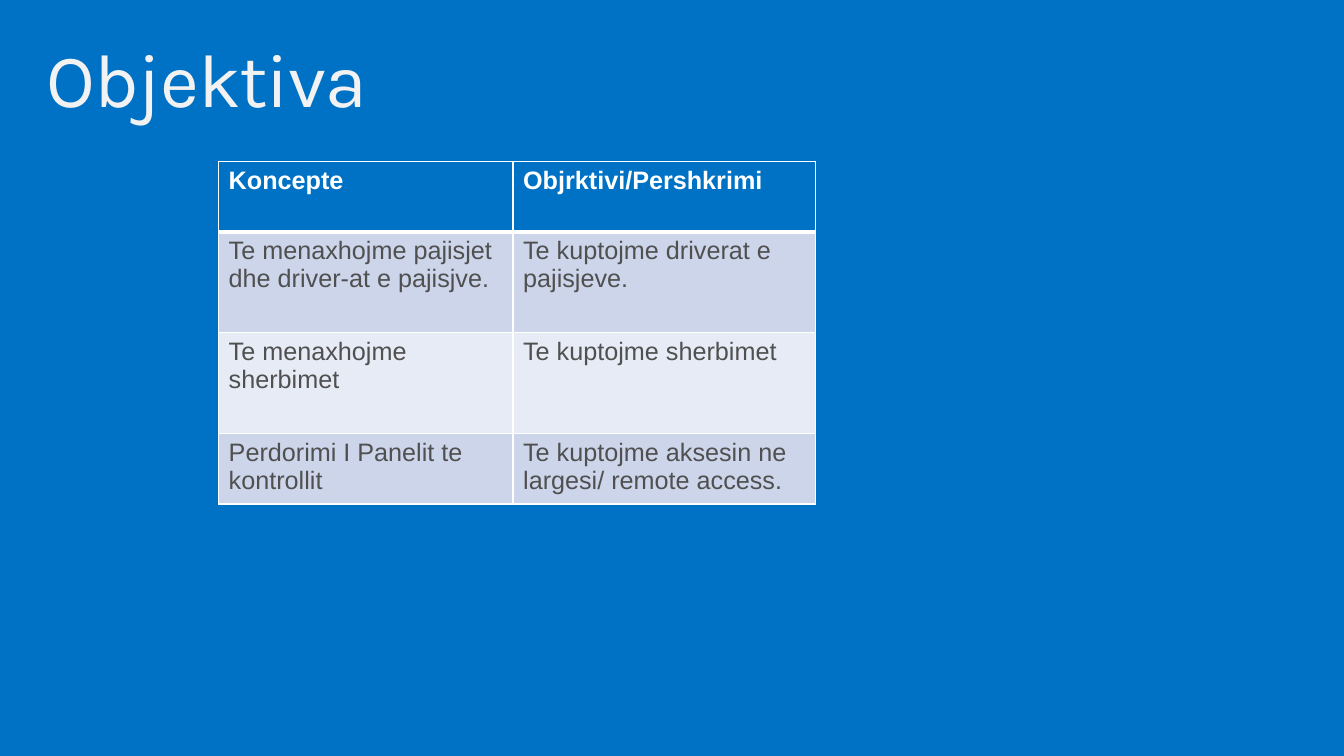
from dataclasses import dataclass

from lxml.etree import SubElement
from pptx import Presentation
from pptx.dml.color import RGBColor
from pptx.enum.text import MSO_ANCHOR
from pptx.oxml.ns import qn
from pptx.slide import Slide
from pptx.table import _Cell
from pptx.text.text import TextFrame
from pptx.util import Cm, Pt


@dataclass(frozen=True)
class Theme:
    blue: str = "0072C6"
    heading: str = "F2F2F2"
    white: str = "FFFFFF"
    body: str = "505050"
    bands: tuple[str, str] = ("CCD5EA", "E7EBF5")
    heading_font: str = "Karla"
    table_font: str = "Arial"
    heading_size: float = 54
    table_size: float = 18
    thin_rule: float = 1
    thick_rule: float = 3


@dataclass(frozen=True)
class Objective:
    concept: str
    description: str
    height: float


THEME = Theme()
COLUMN_WIDTHS = (7.42, 7.62)
OBJECTIVES = (
    Objective("Koncepte", "Objrktivi/Pershkrimi", 1.78),
    Objective("Te menaxhojme pajisjet dhe driver-at e pajisjve.",
              "Te kuptojme driverat e pajisjeve.", 2.54),
    Objective("Te menaxhojme sherbimet", "Te kuptojme sherbimet", 2.54),
    Objective("Perdorimi I Panelit te kontrollit",
              "Te kuptojme aksesin ne largesi/ remote access.", 1.78),
)


def write_text(frame: TextFrame, text: str, *, font: str, size: float, color: str,
               bold: bool = False, line_spacing: float = 1.0, tracking: float = 0,
               inset_x: float = 0.25, inset_y: float = 0.13) -> None:
    frame.word_wrap = True
    frame.margin_left = frame.margin_right = Cm(inset_x)
    frame.margin_top = frame.margin_bottom = Cm(inset_y)
    paragraph = frame.paragraphs[0]
    paragraph.line_spacing = line_spacing
    run = paragraph.add_run()
    run.text = text
    run.font.name = font
    run.font.size = Pt(size)
    run.font.bold = bold
    run.font.color.rgb = RGBColor.from_string(color)
    if tracking:
        run.font._element.set("spc", str(round(tracking * 100)))


def draw_borders(cell: _Cell, top: float, bottom: float) -> None:
    properties = cell._tc.get_or_add_tcPr()
    widths = {"a:lnL": THEME.thin_rule, "a:lnR": THEME.thin_rule, "a:lnT": top, "a:lnB": bottom}
    for tag, width in widths.items():
        border = SubElement(properties, qn(tag), w=str(Pt(width)))
        SubElement(SubElement(border, qn("a:solidFill")), qn("a:srgbClr"), val=THEME.white)


def add_heading(slide: Slide, text: str) -> None:
    heading = slide.shapes.add_textbox(Cm(0.76), Cm(0.81), Cm(32.39), Cm(2.49))
    heading.text_frame.vertical_anchor = MSO_ANCHOR.TOP
    write_text(heading.text_frame, text, font=THEME.heading_font, size=THEME.heading_size,
               color=THEME.heading, line_spacing=0.9, tracking=-0.8, inset_x=0.41, inset_y=0.25)


def add_objectives(slide: Slide, objectives: tuple[Objective, ...]) -> None:
    total_height = sum(objective.height for objective in objectives)
    table = slide.shapes.add_table(
        len(objectives), len(COLUMN_WIDTHS), Cm(5.51), Cm(4.06),
        Cm(sum(COLUMN_WIDTHS)), Cm(total_height)).table
    for column, width in zip(table.columns, COLUMN_WIDTHS):
        column.width = Cm(width)
    for index, objective in enumerate(objectives):
        table.rows[index].height = Cm(objective.height)
        is_header = index == 0
        fill = THEME.blue if is_header else THEME.bands[(index - 1) % 2]
        top = THEME.thick_rule if index == 1 else THEME.thin_rule
        bottom = THEME.thick_rule if is_header else THEME.thin_rule
        for cell, text in zip(table.rows[index].cells, (objective.concept, objective.description)):
            write_text(cell.text_frame, text, font=THEME.table_font, size=THEME.table_size,
                       color=THEME.white if is_header else THEME.body, bold=is_header)
            draw_borders(cell, top, bottom)
            cell.fill.solid()
            cell.fill.fore_color.rgb = RGBColor.from_string(fill)


def main() -> None:
    presentation = Presentation()
    presentation.slide_width = Cm(33.87)
    presentation.slide_height = Cm(19.05)
    slide = presentation.slides.add_slide(presentation.slide_layouts[6])
    background = slide.background.fill
    background.solid()
    background.fore_color.rgb = RGBColor.from_string(THEME.blue)
    add_heading(slide, "Objektiva")
    add_objectives(slide, OBJECTIVES)
    presentation.save("out.pptx")


if __name__ == "__main__":
    main()
